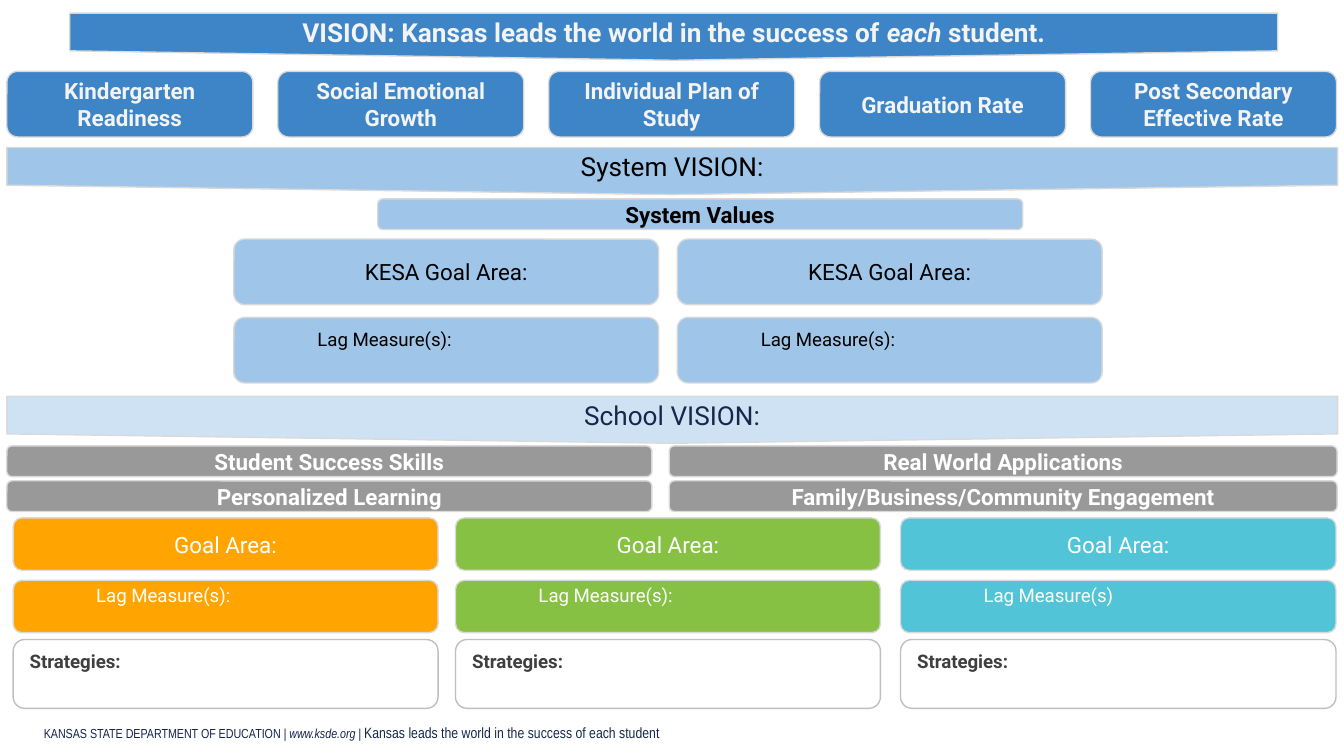
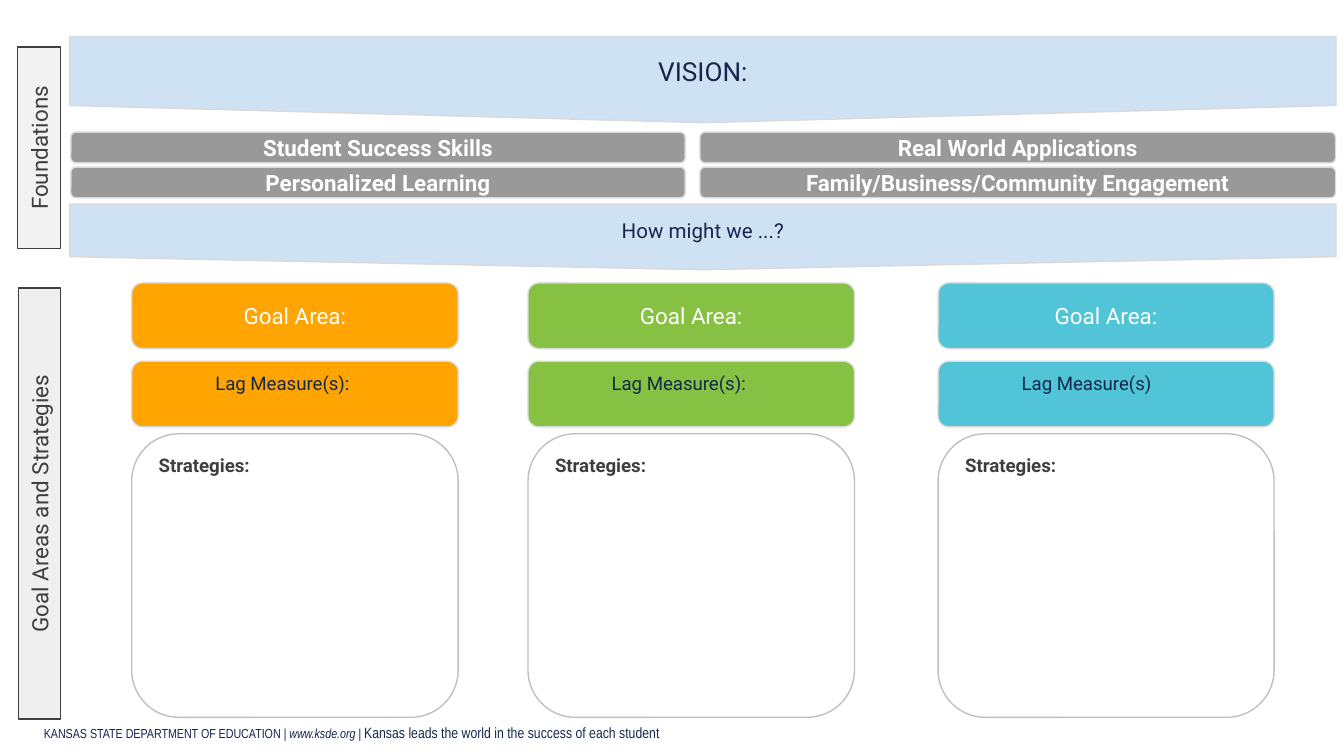
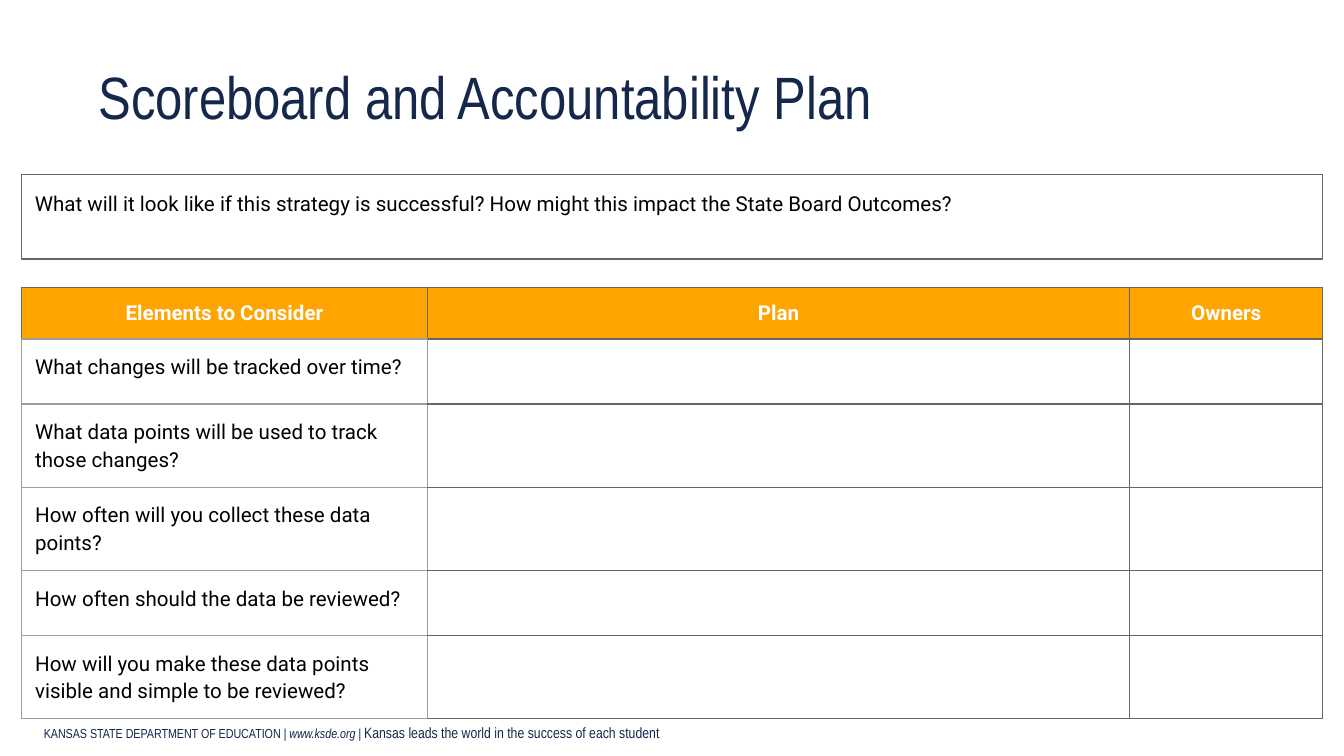
import pptx
import pptx.dml.color
import pptx.enum.shapes
import pptx.enum.text
import pptx.oxml
import pptx.oxml.ns
import pptx.util

Cm = pptx.util.Cm
Pt = pptx.util.Pt
rgb = pptx.dml.color.RGBColor.from_string
Kind = pptx.enum.shapes.MSO_SHAPE
Align = pptx.enum.text.PP_ALIGN
Anchor = pptx.enum.text.MSO_ANCHOR

# Shared colours and fonts
NAVY, BLACK, WHITE, PALE = "15284B", "000000", "FFFFFF", "F3F3F3"
DEEP, BLUE, LIGHT, GRAY = "3D85C6", "9FC5E8", "CFE2F3", "999999"
DARK, RULE, SOFT, ORANGE = "3F3F3F", "666666", "9E9E9E", "FFA400"
HUES = [ORANGE, "86C144", "51C5D7"]
SANS, SLIM = "Roboto", "Arial Narrow"
ROUND, RECT, BAND = Kind.ROUNDED_RECTANGLE, Kind.RECTANGLE, Kind.FLOWCHART_OFFPAGE_CONNECTOR


def box(slide, kind, place, text, fill, ink, size=12, bold=False, line="D9D9D9"):
    shape = slide.shapes.add_shape(kind, *[Cm(n) for n in place])
    shape.shadow.inherit = False
    shape.fill.solid()
    shape.fill.fore_color.rgb = rgb(fill)
    shape.line.color.rgb = rgb(line)
    shape.line.width = Pt(0.75)
    frame = shape.text_frame
    frame.vertical_anchor = Anchor.MIDDLE
    if kind == BAND:
        frame.margin_top = frame.margin_bottom = Cm(0.25)
    para = frame.paragraphs[0]
    para.alignment = Align.CENTER
    para.font.name, para.font.size, para.font.bold = SANS, Pt(size), bold
    para.font.color.rgb = rgb(ink)
    para.add_run().text = text
    return shape


def lag(slide, place, text, fill, ink):
    frame = box(slide, ROUND, place, text, fill, ink, 10).text_frame
    frame.margin_left, frame.margin_bottom = Cm(1.52), Cm(0.54)
    frame.paragraphs[0].alignment = Align.LEFT


deck = pptx.Presentation()
deck.slide_width, deck.slide_height = Cm(25.4), Cm(14.29)
full, school, score = [deck.slides.add_slide(deck.slide_layouts[n]) for n in (6, 6, 5)]

# Footer on every slide
for slide in deck.slides:
    note = slide.shapes.add_textbox(Cm(0.58), Cm(13.54), Cm(16.76), Cm(0.61))
    note.text_frame.word_wrap = True
    note.text_frame.vertical_anchor = Anchor.BOTTOM
    para = note.text_frame.paragraphs[0]
    para.font.name = SLIM
    for text, size, slant, ink in [
        ("KANSAS STATE DEPARTMENT OF EDUCATION ", 7, False, "15254B"),
        ("| www.ksde.org | ", 7, True, "15254B"),
        ("Kansas leads the world in the success of each student", 8, False, NAVY),
    ]:
        run = para.add_run()
        run.text = text
        run.font.size, run.font.italic = Pt(size), slant
        run.font.color.rgb = rgb(ink)

# Slide 1: state vision and outcomes
top = box(full, BAND, (1.32, 0.25, 22.83, 0.89),
          "VISION: Kansas leads the world in the success of ", DEEP, PALE, 14, True)
for text, slant in [("each ", True), ("student.", False)]:
    run = top.text_frame.paragraphs[0].add_run()
    run.text, run.font.italic = text, slant
goals = ["Kindergarten Readiness", "Social Emotional Growth", "Individual Plan of Study",
         "Graduation Rate", "Post Secondary Effective Rate"]
for i, text in enumerate(goals):
    box(full, ROUND, (0.13 + 5.12 * i, 1.35, 4.65, 1.24), text, DEEP, PALE, bold=True)

# Slide 1: system level
box(full, BAND, (0.13, 2.79, 25.15, 0.89), "System VISION:", BLUE, BLACK, 14)
box(full, ROUND, (7.14, 3.76, 12.19, 0.58), "System Values", BLUE, BLACK, bold=True)
for left in (4.42, 12.8):
    box(full, ROUND, (left, 4.52, 8.03, 1.24), "KESA Goal Area:", BLUE, BLACK)
    lag(full, (left, 6, 8.03, 1.24), "Lag Measure(s):", BLUE, BLACK)
box(full, BAND, (0.13, 7.49, 25.15, 0.89), "School VISION:", LIGHT, NAVY, 14)

# Slide 2: bands and side labels
box(school, BAND, (1.32, 0.69, 23.93, 1.63), "VISION:", LIGHT, NAVY, 14)
box(school, BAND, (1.32, 3.86, 23.93, 1.24), "How might we ...?", LIGHT, NAVY, 11)
for place, text, fill in [
    ((-1.17, 2.39, 3.81, 0.81), "Foundations", "F2F2F2"),
    ((-3.33, 9.12, 8.15, 0.79), "Goal Areas and Strategies", "EFEFEF"),
]:
    box(school, RECT, place, text, fill, DARK, line=DARK).rotation = 270

# Slides 1 and 2: four skill bars
skills = [["Student Success Skills", "Real World Applications"],
          ["Personalized Learning", "Family/Business/Community Engagement"]]
for slide, high, cols in [
    (full, 8.43, [(0.13, 12.19), (12.65, 12.62)]),
    (school, 2.5, [(1.34, 11.61), (13.23, 12.01)]),
]:
    for r, row in enumerate(skills):
        for text, (left, wide) in zip(row, cols):
            box(slide, ROUND, (left, high + 0.66 * r, wide, 0.58), text, GRAY, WHITE, bold=True)

# Slides 1 and 2: three goal columns, rows given as (top, height)
for slide, cols, rows, ink in [
    (full, [(0.25, 8.03), (8.61, 8.03), (17.02, 8.23)],
     [(9.79, 0.99), (10.97, 0.99), (12.09, 1.3)], WHITE),
    (school, [(2.49, 6.17), (9.98, 6.17), (17.73, 6.35)],
     [(5.35, 1.24), (6.83, 1.24), (8.2, 5.36)], NAVY),
]:
    ends = [":", ":", ""]
    for (left, wide), hue, end in zip(cols, HUES, ends):
        goal, mark, plan = [(left, high, wide, tall) for high, tall in rows]
        box(slide, ROUND, goal, "Goal Area:", hue, WHITE)
        lag(slide, mark, "Lag Measure(s)" + end, hue, ink)
        frame = box(slide, ROUND, plan, "Strategies:", WHITE, DARK, 10, True, "BFBFBF").text_frame
        frame.vertical_anchor = Anchor.TOP
        frame.paragraphs[0].alignment = Align.LEFT

# Slide 3: title and question
title = score.shapes.title
title.left, title.top, title.width, title.height = Cm(0.84), Cm(0), Cm(24.13), Cm(2.49)
title.text = "Scoreboard and Accountability Plan"
frame = title.text_frame
frame.vertical_anchor = Anchor.BOTTOM
frame.margin_left, frame.margin_top, frame.margin_bottom = Cm(1.02), Cm(0.25), 0
para = frame.paragraphs[0]
para.alignment = Align.LEFT
para.font.name, para.font.size = SLIM, Pt(32)
para.font.color.rgb = rgb(NAVY)

ask = "What will it look like if this strategy is successful? How might this impact the State Board Outcomes?"
frame = box(score, RECT, (0.41, 3.3, 24.59, 1.6), ask, WHITE, BLACK, 11, line=RULE).text_frame
frame.vertical_anchor = Anchor.TOP
frame.margin_top = frame.margin_bottom = Cm(0.25)
frame.paragraphs[0].alignment = Align.LEFT
frame.paragraphs[0].line_spacing = 1.15

# Slide 3: plan table
heads = ["Elements to Consider", "Plan", "Owners"]
items = ["What changes will be tracked over time?",
         "What data points will be used to track those changes?",
         "How often will you collect these data points?",
         "How often should the data be reviewed?",
         "How will you make these data points visible and simple to be reviewed?"]
wides = [7.67, 13.27, 3.65]
talls = [0.95, 1.23, 1.55, 1.54, 1.23, 1.55]
table = score.shapes.add_table(6, 3, Cm(0.41), Cm(5.44), Cm(sum(wides)), Cm(sum(talls))).table
for col, wide in zip(table.columns, wides):
    col.width = Cm(wide)
for row, tall in zip(table.rows, talls):
    row.height = Cm(tall)
for r, row in enumerate([heads] + [[text, "", ""] for text in items]):
    for c, text in enumerate(row):
        cell = table.cell(r, c)
        cell.fill.solid()
        cell.fill.fore_color.rgb = rgb(WHITE if r else ORANGE)
        if text:
            cell.margin_top = cell.margin_bottom = Cm(0.25)
            cell.text = text
            para = cell.text_frame.paragraphs[0]
            para.font.name, para.font.size, para.font.bold = SANS, Pt(11), r == 0
            para.font.color.rgb = rgb(BLACK if r else WHITE)
            para.alignment = Align.LEFT if r else Align.CENTER
            para.line_spacing = 1.15 if r else 1.0
        # Borders: softer around the questions
        first = r > 0 and c == 0
        soft = {"L": r > 0 and c < 2, "R": first, "T": first, "B": c == 0}
        props = cell._tc.get_or_add_tcPr()
        for i, side in enumerate("LRTB"):
            props.insert(i, pptx.oxml.parse_xml(
                f'<a:ln{side} {pptx.oxml.ns.nsdecls("a")} w="9525"><a:solidFill>'
                f'<a:srgbClr val="{SOFT if soft[side] else RULE}"/></a:solidFill></a:ln{side}>'))

deck.save("out.pptx")
